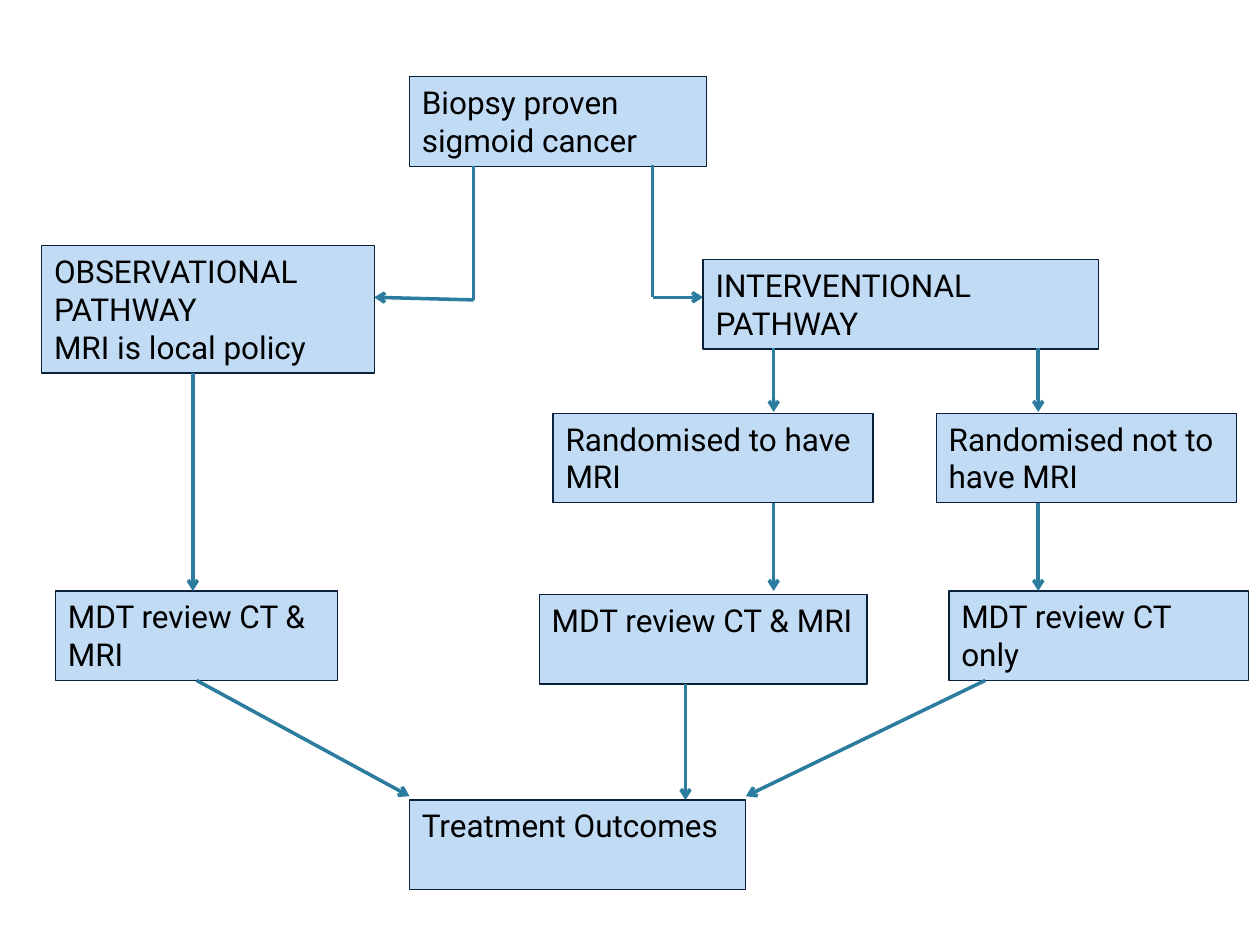
import pptx
import pptx.util
import pptx.dml.color
import pptx.enum.shapes
import pptx.enum.text
import pptx.oxml
import pptx.oxml.ns
from lxml import etree

Pt = pptx.util.Pt
RGBColor = pptx.dml.color.RGBColor
qn = pptx.oxml.ns.qn

PALE_BLUE = RGBColor(0xB2, 0xD2, 0xF3)
NAVY = RGBColor(0x09, 0x21, 0x3B)
TEAL = RGBColor(0x2C, 0x7C, 0x9F)
BLACK = RGBColor(0, 0, 0)

STEP_HEIGHT = 51.1
FRAME_FORMAT = {
    "word_wrap": True,
    "vertical_anchor": pptx.enum.text.MSO_ANCHOR.TOP,
    "auto_size": pptx.enum.text.MSO_AUTO_SIZE.SHAPE_TO_FIT_TEXT,
}
FONT_FORMAT = {"name": "Roboto", "size": Pt(18)}


def apply_format(target, values):
    for key, value in values.items():
        setattr(target, key, value)


def add_step(slide, origin, left, top, width, text, height=STEP_HEIGHT):
    step = slide.shapes.add_shape(
        pptx.enum.shapes.MSO_SHAPE.RECTANGLE,
        Pt(origin[0] + left), Pt(origin[1] + top), Pt(width), Pt(height))
    step.shadow.inherit = False
    step.fill.solid()
    step.fill.fore_color.rgb = PALE_BLUE
    color = step.fill._xPr.find(qn("a:solidFill"))[0]
    etree.SubElement(color, qn("a:alpha"), val="80000")
    step.line.color.rgb = NAVY
    step.line.width = Pt(0.75)
    frame = step.text_frame
    apply_format(frame, FRAME_FORMAT)
    frame.text = text
    for paragraph in frame.paragraphs:
        paragraph.alignment = pptx.enum.text.PP_ALIGN.LEFT
        for run in paragraph.runs:
            apply_format(run.font, FONT_FORMAT)
            run.font.color.rgb = BLACK
    return step


def add_flow(slide, origin, start, end, arrow=True):
    flow = slide.shapes.add_connector(
        pptx.enum.shapes.MSO_CONNECTOR.STRAIGHT,
        Pt(origin[0] + start[0]), Pt(origin[1] + start[1]),
        Pt(origin[0] + end[0]), Pt(origin[1] + end[1]))
    flow.line.color.rgb = TEAL
    flow.line.width = Pt(2)
    if arrow:
        etree.SubElement(flow.line._get_or_add_ln(), qn("a:tailEnd"), type="arrow")
    etree.SubElement(flow._element.spPr, qn("a:effectLst"))
    return flow


def add_diagnosis(slide, origin):
    add_step(slide, origin, 0, 0, 169.9, "Biopsy proven sigmoid cancer")
    for start, corner, end in (
        ((139, 50.4), (139, 126), (167.8, 126)),
        ((36.7, 51.1), (36.7, 127.5), (-20.2, 126)),
    ):
        add_flow(slide, origin, start, corner, arrow=False)
        add_flow(slide, origin, corner, end)


def add_observational(slide, origin):
    add_step(slide, origin, 0, 0, 190.1,
             "OBSERVATIONAL PATHWAY\nMRI is local policy", height=72.7)
    review = add_step(slide, origin, 7.9, 197.3, 161.3, "MDT review CT & MRI")
    add_flow(slide, origin, (86.4, 72.7), (86.4, 197.3))
    to_outcomes = add_flow(slide, origin, (88.5, 248.4), (210.2, 314.6))
    to_outcomes.begin_connect(review, 2)


def add_interventional(slide, origin):
    add_step(slide, origin, 93.6, 0, 226.1, "INTERVENTIONAL PATHWAY")
    arms = (
        ("Randomised to have MRI", 7.9, 182.9,
         "MDT review CT & MRI", 0, 191.5, 187.2,
         133.9, (83.5, 242.6), (83.5, 308.9)),
        ("Randomised not to have MRI", 226.8, 171.4,
         "MDT review CT only", 234, 189.4, 171.4,
         285.1, (254.8, 240.5), (118, 306.7)),
    )
    for (arm, arm_left, arm_width, review, review_left, review_top,
         review_width, flow_x, outcome_start, outcome_end) in arms:
        add_step(slide, origin, arm_left, 87.9, arm_width, arm)
        add_step(slide, origin, review_left, review_top, review_width, review)
        add_flow(slide, origin, (flow_x, 50.4), (flow_x, 87.1))
        add_flow(slide, origin, (flow_x, 139), (flow_x, 189.4))
        add_flow(slide, origin, outcome_start, outcome_end)


def add_outcomes(slide, origin):
    add_step(slide, origin, 0, 0, 192.2, "Treatment Outcomes")


def main():
    presentation = pptx.Presentation()
    presentation.slide_width = Pt(720)
    presentation.slide_height = Pt(540)
    slide = presentation.slides.add_slide(presentation.slide_layouts[6])
    add_diagnosis(slide, (234, 43.9))
    add_observational(slide, (23.8, 140.4))
    add_interventional(slide, (308.2, 148.3))
    add_outcomes(slide, (234, 457.2))
    presentation.save("out.pptx")


if __name__ == "__main__":
    main()
